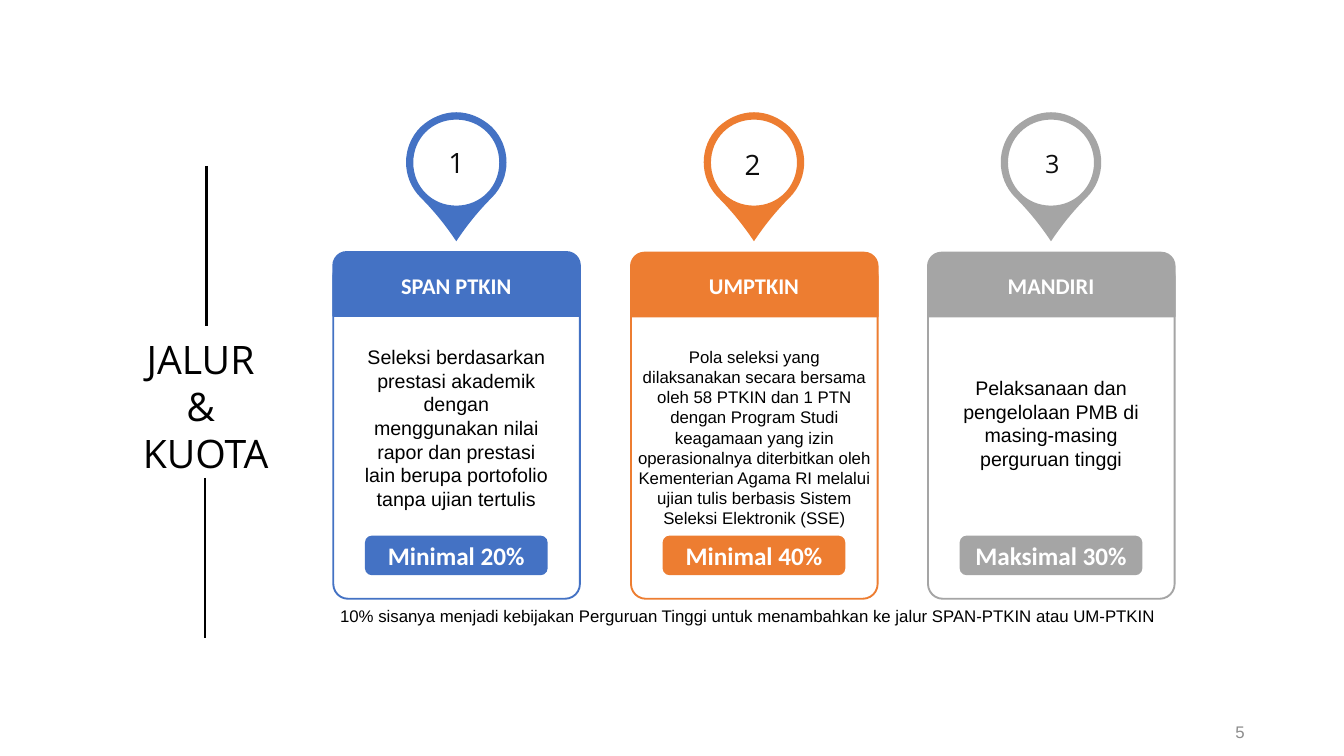
"""Build the slide on admission tracks and their quotas."""
from lxml import etree
from pptx import Presentation
from pptx.dml.color import RGBColor
from pptx.enum.shapes import MSO_CONNECTOR, MSO_SHAPE
from pptx.enum.text import MSO_ANCHOR, MSO_AUTO_SIZE, PP_ALIGN
from pptx.oxml.ns import qn
from pptx.util import Pt

ROUND, TOP_ROUND = MSO_SHAPE.ROUNDED_RECTANGLE, MSO_SHAPE.ROUND_2_SAME_RECTANGLE
LINE = MSO_CONNECTOR.STRAIGHT
TOP, MIDDLE = MSO_ANCHOR.TOP, MSO_ANCHOR.MIDDLE
CENTER, RIGHT, JUSTIFY = PP_ALIGN.CENTER, PP_ALIGN.RIGHT, PP_ALIGN.JUSTIFY

PX = 9144
COLORS = {"blue": "4472C4", "orange": "ED7D31", "gray": "A5A5A5", "white": "FFFFFF",
          "black": "000000", "ink": "0D0D0D", "pale": "8C8C8C"}

TITLE = ["JALUR ", "& ", "KUOTA"]
NOTE = ("10% sisanya menjadi kebijakan Perguruan Tinggi untuk menambahkan "
        "ke jalur SPAN-PTKIN atau UM-PTKIN")
TRACKS = [
    {"color": "blue", "name": "SPAN PTKIN", "quota": "Minimal 20%", "left": 496, "head": 375,
     "text": "Seleksi berdasarkan prestasi akademik dengan menggunakan nilai rapor "
             "dan prestasi lain berupa portofolio tanpa ujian tertulis",
     "box": (31, 509, 304, 257), "size": 21, "num": (106, 211, 154, 61), "num_size": 30},
    {"color": "orange", "name": "UMPTKIN", "quota": "Minimal 40%", "left": 939, "head": 376,
     "text": "Pola seleksi yang dilaksanakan secara bersama oleh 58 PTKIN dan 1 PTN "
             "dengan Program Studi keagamaan yang izin operasionalnya diterbitkan oleh "
             "Kementerian Agama RI melalui ujian tulis berbasis Sistem Seleksi "
             "Elektronik (SSE)",
     "box": (0, 511, 367, 252), "size": 18, "num": (104, 215, 154, 61), "num_size": 30},
    {"color": "gray", "name": "MANDIRI", "quota": "Maksimal 30%", "left": 1381, "head": 376,
     "text": "Pelaksanaan dan pengelolaan PMB di masing-masing perguruan tinggi",
     "box": (31, 555, 304, 151), "size": 21, "num": (108, 216, 154, 56), "num_size": 27},
]
RULES = [(307, 247, 485), (305, 711, 949)]
WIDE, PIN_Y = 367, 242
EDGE = [(0, -75), (19, -75), (38, -67), (53, -53), (82, -24), (82, 23), (53, 52),
        (33, 72), (16, 93), (0, 117)]
HOLE = [(0, -64), (-36, -64), (-64, -36), (-64, 0), (-64, 36), (-36, 64), (0, 64)]


def rgb(name):
    return RGBColor.from_string(COLORS[name])


def px(*sizes):
    return [size * PX for size in sizes]


def write(shape, lines, font, size, color, align=CENTER, anchor=TOP, bold=False, wrap=True):
    frame = shape.text_frame
    frame.text = "\n".join(lines)
    frame.word_wrap = wrap
    frame.auto_size = MSO_AUTO_SIZE.NONE
    frame.vertical_anchor = anchor
    for para in frame.paragraphs:
        para.alignment = align
        for run in para.runs:
            run.font.name = font
            run.font.size = Pt(size)
            run.font.bold = bold
            run.font.color.rgb = rgb(color)


def label(shapes, box, text, *style, **more):
    shape = shapes.add_textbox(*px(*box))
    write(shape, [text], *style, **more)
    return shape


def paint(shape, fill, line=None):
    shape.shadow.inherit = False
    shape.fill.solid()
    shape.fill.fore_color.rgb = rgb(fill)
    if line:
        shape.line.color.rgb = rgb(line)
        shape.line.width = Pt(2)
    else:
        shape.line.fill.background()


def block(shapes, kind, box, corner, fill, line=None):
    shape = shapes.add_shape(kind, *px(*box))
    shape.adjustments[0] = corner
    paint(shape, fill, line)


def loop(half, mid):
    nodes = half + [(-x, y) for x, y in half[-2::-1]]
    return [(mid + x, PIN_Y + y) for x, y in nodes]


def curve(shape):
    steps = list(shape._element.iter(qn("a:lnTo")))
    for i in range(0, len(steps), 3):
        first, *others = steps[i:i + 3]
        first.tag = qn("a:cubicBezTo")
        for step in others:
            first.append(step[0])
            step.getparent().remove(step)


def pin(shapes, mid, color):
    edge, hole = loop(EDGE, mid), loop(HOLE, mid)
    form = shapes.build_freeform(*edge[0], scale=PX)
    form.add_line_segments(edge[1:], close=False)
    form.move_to(*hole[0])
    form.add_line_segments(hole[1:], close=False)
    shape = form.convert_to_shape()
    curve(shape)
    paint(shape, color)


def card(shapes, number, track):
    color, left = track["color"], track["left"]
    pin(shapes, left + WIDE // 2, color)
    block(shapes, ROUND, (left, 389, WIDE, 502), 0.06, "white", color)
    block(shapes, TOP_ROUND, (left, track["head"], WIDE, 95), 0.21, color, color)
    block(shapes, ROUND, (left + 47, 797, 272, 59), 0.18, color)
    write(shapes[-1], [track["quota"]], "Calibri", 27, "white", anchor=MIDDLE, bold=True)
    x, *rest = track["box"]
    label(shapes, (left + x, *rest), track["text"], "Arial", track["size"], "black")
    label(shapes, (left + 31, 400, 304, 50), track["name"], "Calibri", 24, "white", bold=True)
    x, *rest = track["num"]
    label(shapes, (left + x, *rest), str(number), "Open Sans", track["num_size"], "ink")


def main():
    deck = Presentation()
    deck.slide_width, deck.slide_height = px(2000, 1125)
    slide = deck.slides.add_slide(deck.slide_layouts[5])
    shapes = slide.shapes

    title = shapes.title
    title.left, title.top, title.width, title.height = px(194, 494, 224, 222)
    write(title, TITLE, "Open Sans", 42, "black", wrap=False)

    for number, track in enumerate(TRACKS, 1):
        card(shapes, number, track)

    note = label(shapes, (506, 901, 1221, 30), NOTE, "Arial", 18, "black", JUSTIFY)
    frame = note.text_frame
    frame.margin_left = frame.margin_right = frame.margin_top = frame.margin_bottom = 0
    label(shapes, (1412, 1059, 450, 60), "5", "Arial", 18, "pale", RIGHT, MIDDLE)

    for x, top, bottom in RULES:
        rule = shapes.add_connector(LINE, *px(x, top, x, bottom))
        rule.line.color.rgb = rgb("black")
        rule.line.width = Pt(3)
        etree.SubElement(rule._element.spPr, qn("a:effectLst"))

    deck.save("out.pptx")


if __name__ == "__main__":
    main()
